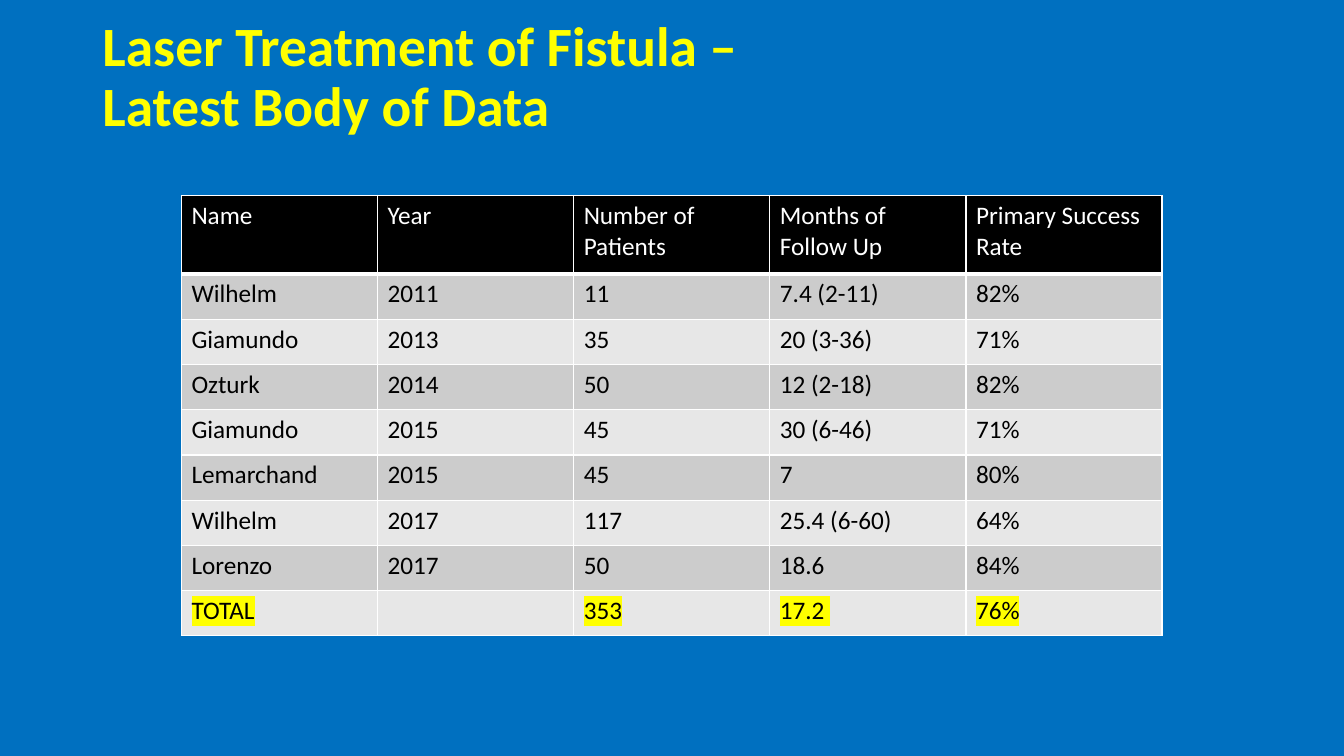
"""Build the slide that tabulates laser fistula treatment studies."""
from copy import deepcopy
from typing import NamedTuple

from pptx import Presentation
from pptx.dml.color import RGBColor
from pptx.enum.text import MSO_ANCHOR as Anchor, MSO_AUTO_SIZE as AutoSize, PP_ALIGN as Align
from pptx.oxml import parse_xml
from pptx.oxml.ns import nsdecls, qn
from pptx.util import Pt

BLUE, YELLOW, BLACK, WHITE = "0070C0", "FFFF00", "000000", "FFFFFF"
BANDS = ("E7E7E7", "CCCCCC")
COLUMN_WIDTH, HEADER_HEIGHT, STUDY_HEIGHT = 140.1, 56, 32.33


class Study(NamedTuple):
    name: str
    year: str
    patients: str
    follow_up: str
    success: str


HEADINGS = Study("Name", "Year", "Number of Patients", "Months of Follow Up",
                 "Primary Success Rate")
STUDIES = [
    Study("Wilhelm", "2011", "11", "7.4 (2-11)", "82%"),
    Study("Giamundo", "2013", "35", "20 (3-36)", "71%"),
    Study("Ozturk", "2014", "50", "12 (2-18)", "82%"),
    Study("Giamundo", "2015", "45", "30 (6-46)", "71%"),
    Study("Lemarchand", "2015", "45", "7", "80%"),
    Study("Wilhelm", "2017", "117", "25.4 (6-60)", "64%"),
    Study("Lorenzo", "2017", "50", "18.6", "84%"),
]
TOTAL = Study("TOTAL", "", "353", "17.2 ", "76%")


def paint(fill, color: str) -> None:
    fill.solid()
    fill.fore_color.rgb = RGBColor.from_string(color)


def write(frame, text: str, *, size: float = 18, color: str = BLACK, bold: bool = False,
          highlight: str = "", spacing: float = 1.0) -> None:
    frame.text = text
    paragraph = frame.paragraphs[0]
    paragraph.alignment = Align.LEFT
    paragraph.line_spacing = spacing
    for run in paragraph.runs:
        run.font.size = Pt(size)
        run.font.name = "Calibri"
        run.font.bold = bold
        paint(run.font.fill, color)
        if highlight:
            run._r.rPr.find(qn("a:solidFill")).addnext(parse_xml(
                f'<a:highlight {nsdecls("a")}><a:srgbClr val="{highlight}"/></a:highlight>'))
    for line_break in paragraph._p.findall(qn("a:br")):
        line_break.insert(0, deepcopy(paragraph.runs[0]._r.rPr))


def add_borders(cell, bottom: float) -> None:
    widths = {"L": 1, "R": 1, "T": 1, "B": bottom}
    for position, (side, width) in enumerate(widths.items()):
        cell._tc.get_or_add_tcPr().insert(position, parse_xml(
            f'<a:ln{side} {nsdecls("a")} w="{Pt(width)}"><a:solidFill>'
            f'<a:srgbClr val="{WHITE}"/></a:solidFill></a:ln{side}>'))


def add_title(slide) -> None:
    title = slide.shapes.title
    title.left, title.top, title.width, title.height = Pt(66), Pt(28.8), Pt(828), Pt(104.4)
    frame = title.text_frame
    frame.auto_size = AutoSize.NONE
    frame.vertical_anchor = Anchor.MIDDLE
    frame.margin_bottom = Pt(52.8)
    write(frame, "Laser Treatment of Fistula – \vLatest Body of Data",
          size=39.6, color=YELLOW, bold=True, spacing=0.9)


def add_studies(slide) -> None:
    rows = [HEADINGS, *STUDIES, TOTAL]
    columns = len(HEADINGS)
    table = slide.shapes.add_table(
        len(rows), columns, Pt(129.6), Pt(139.7), Pt(COLUMN_WIDTH * columns),
        Pt(HEADER_HEIGHT + STUDY_HEIGHT * (len(rows) - 1))).table
    for column in table.columns:
        column.width = Pt(COLUMN_WIDTH)
    for index, study in enumerate(rows):
        heading = study is HEADINGS
        table.rows[index].height = Pt(HEADER_HEIGHT if heading else STUDY_HEIGHT)
        for cell, text in zip(table.rows[index].cells, study):
            paint(cell.fill, BLACK if heading else BANDS[index % 2])
            add_borders(cell, bottom=3 if heading else 1)
            write(cell.text_frame, text, color=WHITE if heading else BLACK,
                  highlight=YELLOW if study is TOTAL else "")


def main() -> None:
    deck = Presentation()
    deck.slide_width, deck.slide_height = Pt(960), Pt(540)
    slide = deck.slides.add_slide(deck.slide_layouts.get_by_name("Title Only"))
    paint(slide.background.fill, BLUE)
    add_title(slide)
    add_studies(slide)
    deck.save("out.pptx")


if __name__ == "__main__":
    main()
